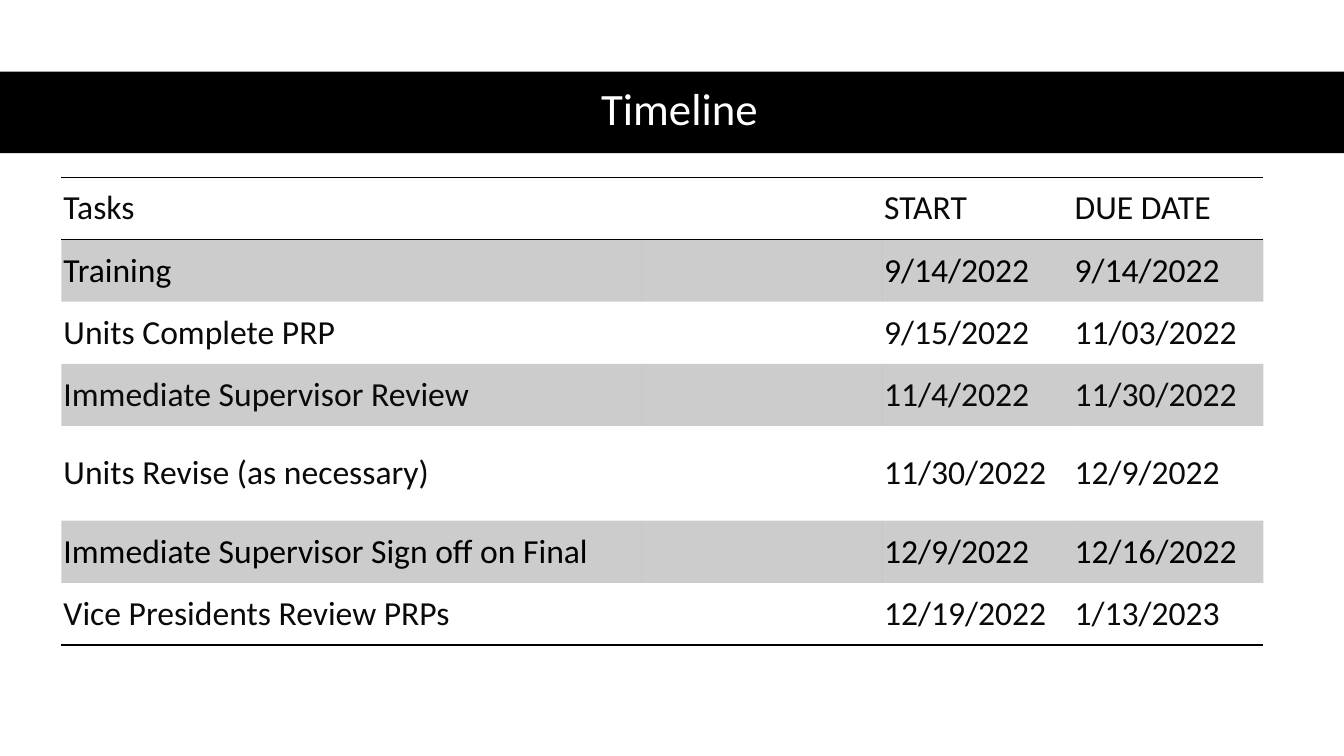
"""Build the Timeline slide: a black title band above a task schedule table."""
from lxml.etree import SubElement
from pptx import Presentation
from pptx.dml.color import RGBColor
from pptx.enum.shapes import MSO_SHAPE
from pptx.enum.text import MSO_ANCHOR, PP_ALIGN
from pptx.oxml.ns import qn
from pptx.util import Inches, Pt

TITLE = "Timeline"
SCHEDULE = [
    ("Tasks", "", "START", "DUE DATE"),
    ("Training", "", "9/14/2022", "9/14/2022"),
    ("Units Complete PRP", "", "9/15/2022", "11/03/2022"),
    ("Immediate Supervisor Review", "", "11/4/2022", "11/30/2022"),
    ("Units Revise (as necessary)", "", "11/30/2022", "12/9/2022"),
    ("Immediate Supervisor Sign off on Final", "", "12/9/2022", "12/16/2022"),
    ("Vice Presidents Review PRPs", "", "12/19/2022", "1/13/2023"),
]
COLORS = {"black": "000000", "ink": "0A0A0A", "white": "FFFFFF"}
FONT = "Calibri"
NO_STYLE = "{2D5ABB26-0587-4C30-8999-92F81FD0307C}"

SLIDE_WIDTH, SLIDE_HEIGHT = 13.33, 7.5
BAND_TOP, BAND_HEIGHT = 0.71, 0.81
LEFT, TABLE_TOP, TABLE_HEIGHT = 0.61, 1.76, 4.64
COLUMN_WIDTHS = (5.75, 2.39, 1.89, 1.89)
TALL_ROW, TALL_HEIGHT = 4, 0.94
ROW_HEIGHT = (TABLE_HEIGHT - TALL_HEIGHT) / (len(SCHEDULE) - 1)
BLACK_TEXT_ROWS = (1, 5)
LAST_ROW = len(SCHEDULE) - 1


def add_span(para, text, size, color):
    span = para.add_run()
    span.text = text
    span.font.size = Pt(size)
    span.font.name = FONT
    span.font.color.rgb = RGBColor.from_string(COLORS[color])


def add_border(cell, side):
    line = SubElement(cell._tc.get_or_add_tcPr(), qn(f"a:ln{side}"), w=str(Pt(1)))
    fill = SubElement(line, qn("a:solidFill"))
    SubElement(fill, qn("a:srgbClr"), val=COLORS["black"])


def shade(cell, percent):
    cell.fill.solid()
    cell.fill.fore_color.rgb = RGBColor.from_string(COLORS["black"])
    color = cell._tc.tcPr.find(f"{qn('a:solidFill')}/{qn('a:srgbClr')}")
    SubElement(color, qn("a:alpha"), val=str(percent * 1000))


def add_title(page):
    band = page.shapes.add_shape(MSO_SHAPE.RECTANGLE, 0, Inches(BAND_TOP),
                                 Inches(SLIDE_WIDTH), Inches(BAND_HEIGHT))
    band.shadow.inherit = False
    band.fill.solid()
    band.fill.fore_color.rgb = RGBColor.from_string(COLORS["black"])
    band.line.fill.background()
    box = page.shapes.add_textbox(Inches(LEFT), Inches(0.7),
                                  Inches(12.26), Inches(BAND_HEIGHT))
    frame = box.text_frame
    frame.word_wrap = True
    frame.vertical_anchor = MSO_ANCHOR.MIDDLE
    para = frame.paragraphs[0]
    para.alignment = PP_ALIGN.CENTER
    para.line_spacing = 0.9
    add_span(para, TITLE, 32, "white")


def fill_cell(cell, text, row):
    cell.vertical_anchor = MSO_ANCHOR.MIDDLE
    cell.margin_left = cell.margin_right = Inches(0.02)
    cell.margin_top = cell.margin_bottom = Inches(0.02)
    if text:
        color = "black" if row in BLACK_TEXT_ROWS else "ink"
        add_span(cell.text_frame.paragraphs[0], text, 24, color)
    if row == 0:
        add_border(cell, "T")
    if row in (0, LAST_ROW):
        add_border(cell, "B")
    if row % 2 and row < LAST_ROW:
        shade(cell, 20)
    else:
        cell.fill.background()


def add_schedule(page):
    graphic = page.shapes.add_table(len(SCHEDULE), len(COLUMN_WIDTHS),
                                    Inches(LEFT), Inches(TABLE_TOP),
                                    Inches(sum(COLUMN_WIDTHS)), Inches(TABLE_HEIGHT))
    table = graphic.table
    table.first_row = table.horz_banding = False
    table._tbl.tblPr.find(qn("a:tableStyleId")).text = NO_STYLE
    for column, width in zip(table.columns, COLUMN_WIDTHS):
        column.width = Inches(width)
    for row, texts in enumerate(SCHEDULE):
        table.rows[row].height = Inches(TALL_HEIGHT if row == TALL_ROW else ROW_HEIGHT)
        for column, text in enumerate(texts):
            fill_cell(table.cell(row, column), text, row)


def main():
    deck = Presentation()
    deck.slide_width, deck.slide_height = Inches(SLIDE_WIDTH), Inches(SLIDE_HEIGHT)
    page = deck.slides.add_slide(deck.slide_layouts[6])
    page.background.fill.solid()
    page.background.fill.fore_color.rgb = RGBColor.from_string(COLORS["white"])
    add_title(page)
    add_schedule(page)
    deck.save("out.pptx")


if __name__ == "__main__":
    main()
